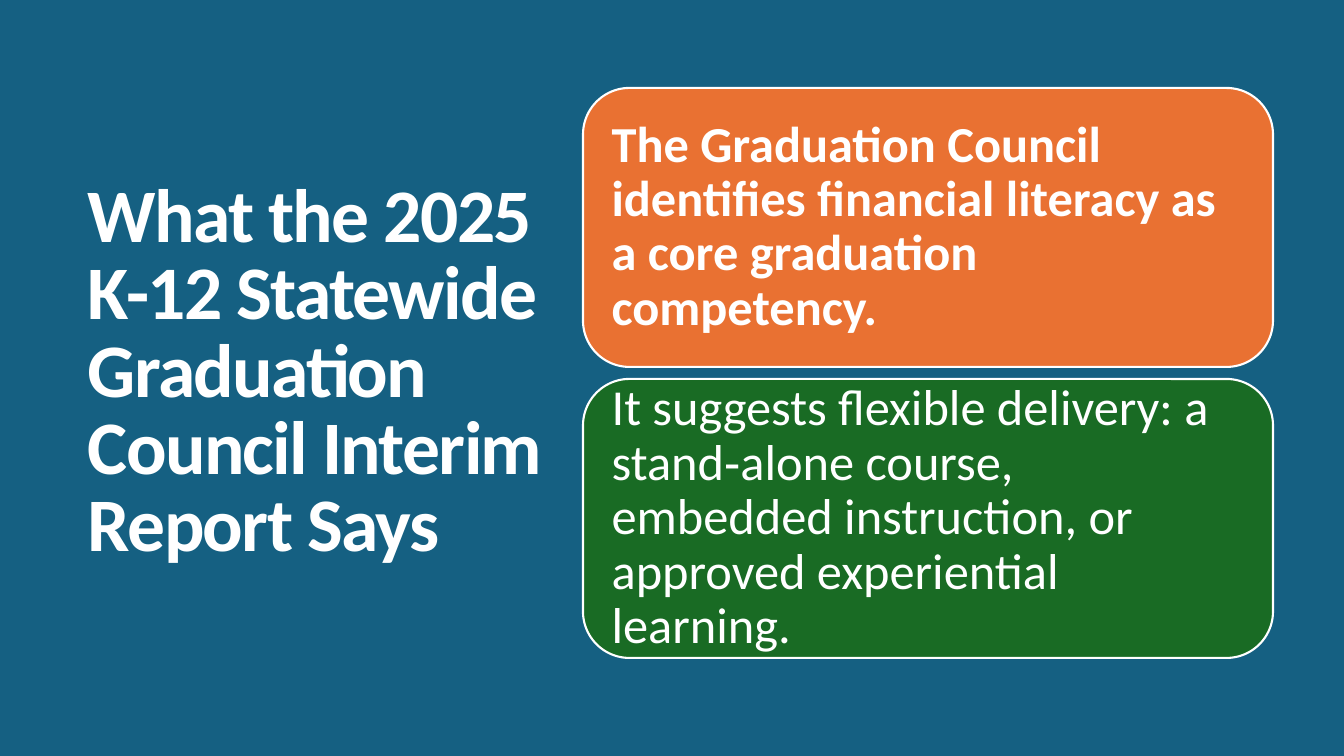
from dataclasses import dataclass

from pptx import Presentation
from pptx.dml.color import RGBColor
from pptx.enum.shapes import MSO_SHAPE
from pptx.enum.text import MSO_ANCHOR, PP_ALIGN
from pptx.util import Emu, Pt

ROUNDED = MSO_SHAPE.ROUNDED_RECTANGLE
MIDDLE = MSO_ANCHOR.MIDDLE
LEFT = PP_ALIGN.LEFT

SLIDE_WIDTH, SLIDE_HEIGHT = 1344, 756
EMU_PER_PX = 12192000 / SLIDE_WIDTH


def px(length):
    return Emu(round(length * EMU_PER_PX))


@dataclass(frozen=True)
class Theme:
    font: str = "Calibri"
    background: RGBColor = RGBColor(0x15, 0x60, 0x82)
    orange: RGBColor = RGBColor(0xE9, 0x71, 0x32)
    green: RGBColor = RGBColor(0x19, 0x6B, 0x24)
    white: RGBColor = RGBColor(0xFF, 0xFF, 0xFF)
    title_size: int = 54
    card_size: int = 36
    outline: float = 1.5


class SlideBuilder:
    def __init__(self, presentation, theme):
        self.theme = theme
        self.slide = presentation.slides.add_slide(presentation.slide_layouts[6])
        fill = self.slide.background.fill
        fill.solid()
        fill.fore_color.rgb = theme.background

    def set_text(self, shape, lines, size, bold, line_spacing, insets, tracking=0):
        """Fill a shape with one paragraph, broken at the given lines."""
        frame = shape.text_frame
        side, top = insets
        frame_format = {
            "word_wrap": True, "vertical_anchor": MIDDLE,
            "margin_left": px(side), "margin_right": px(side),
            "margin_top": px(top), "margin_bottom": px(top),
        }
        for name, value in frame_format.items():
            setattr(frame, name, value)

        paragraph = frame.paragraphs[0]
        paragraph.alignment = LEFT
        paragraph.line_spacing = line_spacing
        font_format = {"name": self.theme.font, "size": Pt(size), "bold": bold}
        for index, line in enumerate(lines):
            if index:
                paragraph.add_line_break()
            run = paragraph.add_run()
            run.text = line
            for name, value in font_format.items():
                setattr(run.font, name, value)
            run.font.color.rgb = self.theme.white
            if tracking:
                run._r.get_or_add_rPr().set("spc", str(tracking))

    def title(self, box, lines):
        shape = self.slide.shapes.add_textbox(*map(px, box))
        self.set_text(shape, lines, self.theme.title_size, True, 0.85, (10, 5), -120)

    def card(self, box, text, color, bold):
        shape = self.slide.shapes.add_shape(ROUNDED, *map(px, box))
        shape.shadow.inherit = False
        shape.fill.solid()
        shape.fill.fore_color.rgb = color
        shape.line.color.rgb = self.theme.white
        shape.line.width = Pt(self.theme.outline)
        self.set_text(shape, [text], self.theme.card_size, bold, 0.9, (15, 15))


def main():
    presentation = Presentation()
    presentation.slide_width = px(SLIDE_WIDTH)
    presentation.slide_height = px(SLIDE_HEIGHT)
    theme = Theme()
    builder = SlideBuilder(presentation, theme)

    # Title on the left
    builder.title((78, 71, 477, 606), [
        "What the 2025",
        "K-12 Statewide Graduation",
        "Council Interim Report Says",
    ])

    # Stacked finding cards on the right
    left, top, width, height, gap = 583, 88, 690, 279, 12
    findings = [
        ("The Graduation Council identifies financial literacy as a core "
         "graduation competency.", theme.orange, True),
        ("It suggests flexible delivery: a stand‑alone course, embedded "
         "instruction, or approved experiential learning.", theme.green, False),
    ]
    for row, (text, color, bold) in enumerate(findings):
        card_top = top + row * (height + gap)
        builder.card((left, card_top, width, height), text, color, bold)

    presentation.save("out.pptx")


if __name__ == "__main__":
    main()
